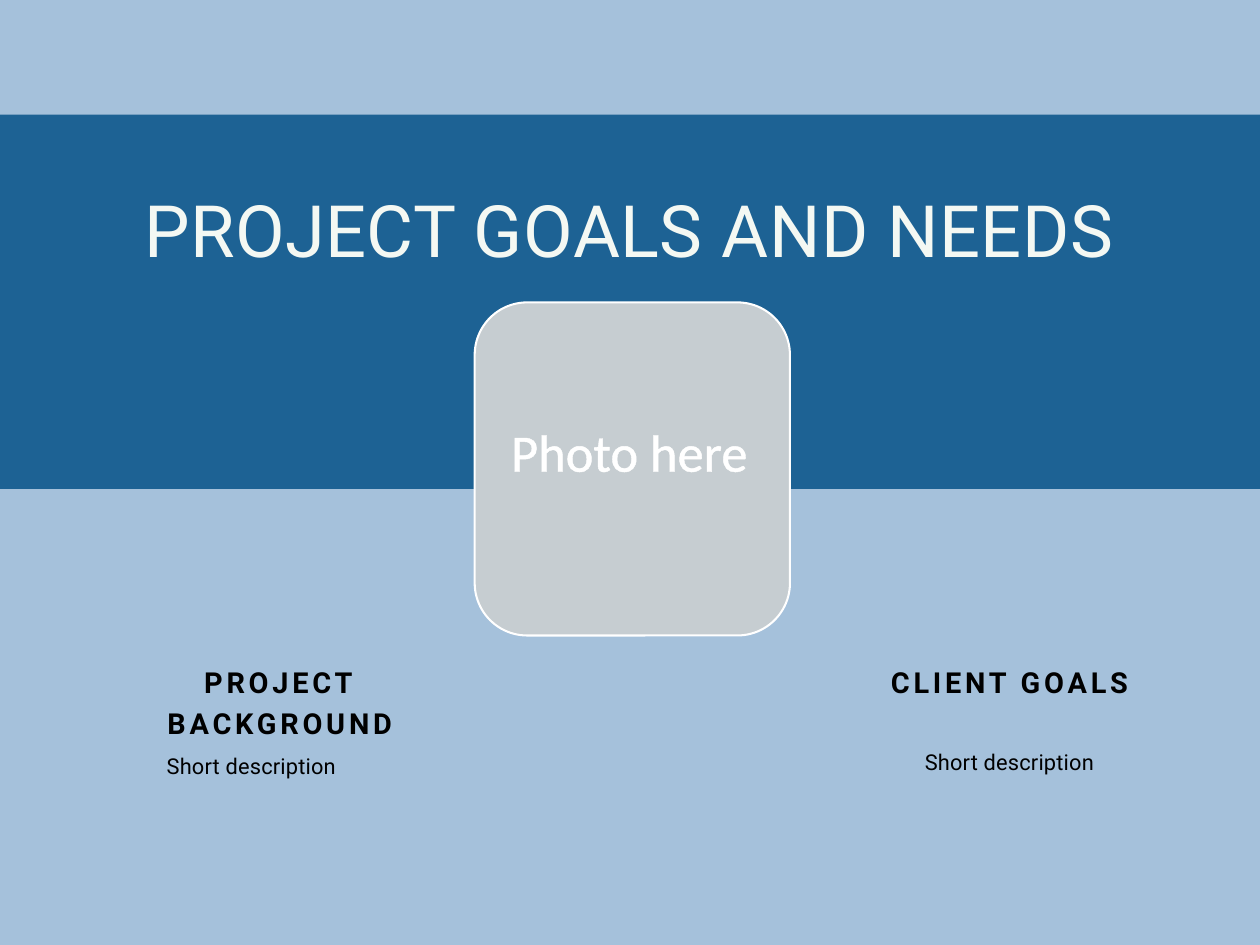
from dataclasses import dataclass

from lxml.etree import SubElement
from pptx import Presentation
from pptx.dml.color import RGBColor
from pptx.enum.shapes import MSO_SHAPE
from pptx.enum.text import MSO_AUTO_SIZE, PP_ALIGN
from pptx.oxml.ns import qn
from pptx.util import Inches, Pt

HUES = {
    "sky": "A5C1DB",
    "band": "1D6294",
    "frame": "C6CDD1",
    "title": "F4F8F3",
    "white": "FFFFFF",
    "black": "000000",
}


@dataclass(frozen=True)
class Box:
    left: float
    top: float
    width: float
    height: float

    def place(self) -> tuple:
        return tuple(map(Inches, (self.left, self.top, self.width, self.height)))


@dataclass(frozen=True)
class Style:
    size: float
    hue: str
    face: str = "Roboto"
    bold: bool = False
    track: float = 0
    lead: float = 0


@dataclass(frozen=True)
class Topic:
    head: str
    left: float
    width: float
    drop: float


TITLE = Style(44, "title", track=0.3, lead=47.1)
HEAD = Style(17.6, "black", bold=True, track=2.3, lead=24.6)
BODY = Style(13.3, "black", track=0.1, lead=20)
PHOTO = Style(32, "white", face="Calibri")

TOPICS = [
    Topic("PROJECT BACKGROUND", 0.81, 3.12, 6.32),
    Topic("CLIENT GOALS", 7.23, 2.64, 6.28),
]


def color(name: str) -> RGBColor:
    return RGBColor.from_string(HUES[name])


def add_panel(shapes, kind, box: Box, hue: str, edge: str = ""):
    panel = shapes.add_shape(kind, *box.place())
    panel.shadow.inherit = False
    panel.fill.solid()
    panel.fill.fore_color.rgb = color(hue)
    if edge:
        panel.line.color.rgb = color(edge)
        panel.line.width = Pt(1.25)
    else:
        panel.line.fill.background()


def add_label(shapes, text: str, box: Box, style: Style, wrap: bool = True):
    frame = shapes.add_textbox(*box.place()).text_frame
    frame.word_wrap = wrap
    frame.auto_size = MSO_AUTO_SIZE.SHAPE_TO_FIT_TEXT
    if wrap:
        frame.margin_left = frame.margin_right = 0
        frame.margin_top = frame.margin_bottom = 0
    para = frame.paragraphs[0]
    para.alignment = PP_ALIGN.CENTER
    if style.lead:
        para.line_spacing = Pt(style.lead)
    font = para.font
    font.name = style.face
    font.size = Pt(style.size)
    font.bold = style.bold
    font.color.rgb = color(style.hue)
    run = para.add_run()
    run.text = text
    if style.track:
        run._r.get_or_add_rPr().set("spc", str(round(style.track * 100)))
    return run


def add_outline(run, hue: str, width: float):
    line = SubElement(run._r.get_or_add_rPr(), qn("a:ln"), w=str(Pt(width)))
    fill = SubElement(line, qn("a:solidFill"))
    SubElement(fill, qn("a:srgbClr"), val=HUES[hue])


def add_topic(shapes, topic: Topic):
    group = shapes.add_group_shape().shapes
    add_label(group, topic.head, Box(topic.left, 5.58, topic.width, 0.33), HEAD)
    add_label(group, "Short description", Box(topic.left, topic.drop, 2.64, 0.26), BODY)


def main():
    deck = Presentation()
    deck.slide_width, deck.slide_height = Inches(10.67), Inches(8)
    slide = deck.slides.add_slide(deck.slide_layouts[6])
    slide.background.fill.solid()
    slide.background.fill.fore_color.rgb = color("sky")
    shapes = slide.shapes

    add_panel(shapes, MSO_SHAPE.RECTANGLE, Box(0, 0.97, 10.67, 3.17), "band")
    add_label(shapes, "PROJECT GOALS AND NEEDS", Box(0.8, 1.65, 9.06, 0.66), TITLE)
    for topic in TOPICS:
        add_topic(shapes, topic)
    add_panel(shapes, MSO_SHAPE.ROUNDED_RECTANGLE, Box(4.02, 2.56, 2.67, 2.82), "frame", "white")
    run = add_label(shapes, "Photo here", Box(4.22, 3.5, 2.22, 0.64), PHOTO, wrap=False)
    add_outline(run, "white", 1.45)

    deck.save("out.pptx")


if __name__ == "__main__":
    main()
